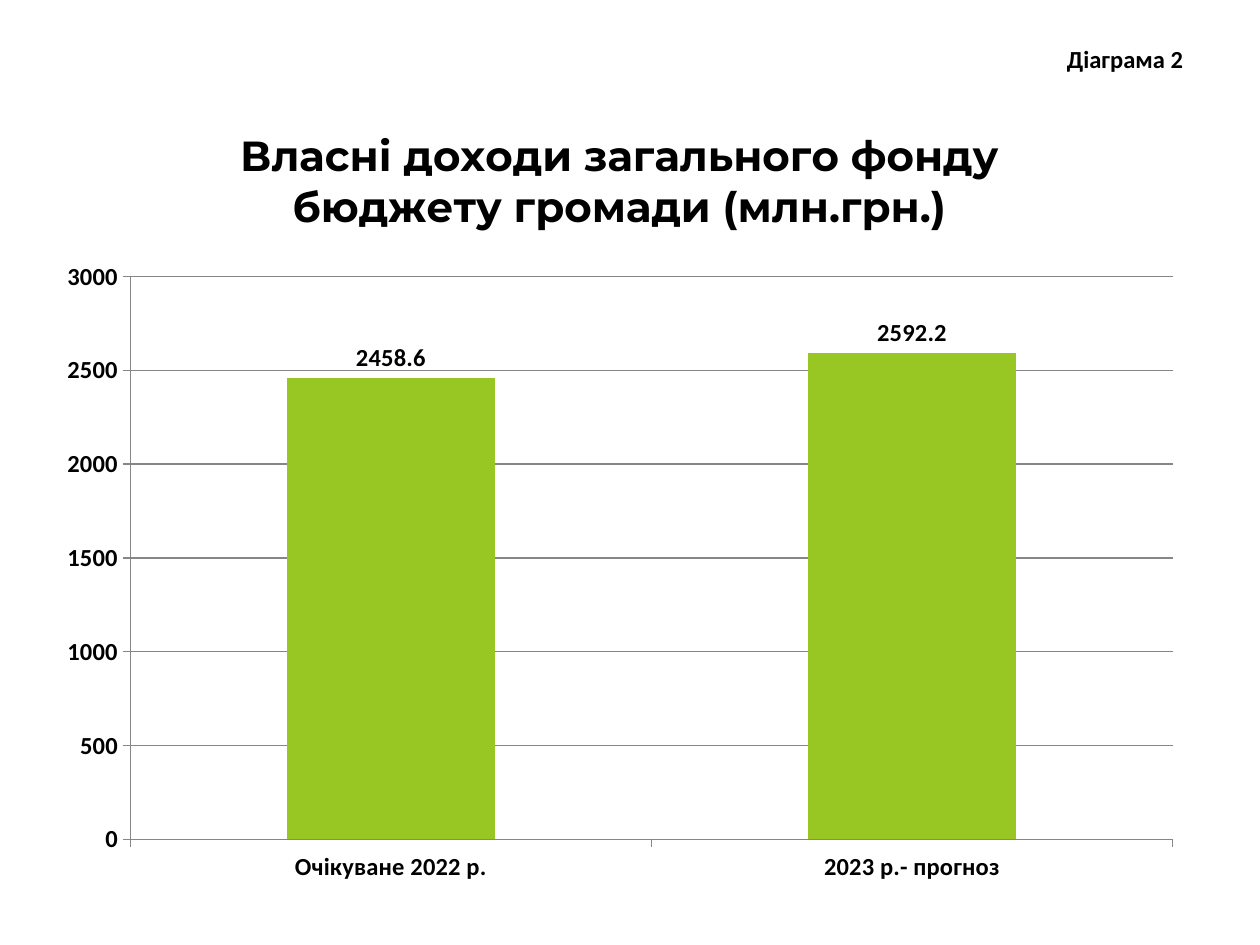
import pptx
import pptx.chart.data
import pptx.dml.color
import pptx.enum.chart
import pptx.enum.text
import pptx.oxml
import pptx.oxml.ns
import pptx.util

Pt = pptx.util.Pt
COLORS = {"text": "000000", "bar": "98C723", "line": "868686"}
BODY_FONT = "Calibri"
TITLE_FONT = "Montserrat"
TITLE = "Власні доходи загального фонду бюджету громади (млн.грн.)"
REVENUES = {"Очікуване 2022 р.": 2458.6, "2023 р.- прогноз": 2592.2}


def rgb(name):
    return pptx.dml.color.RGBColor.from_string(COLORS[name])


def style_font(font, size, name=BODY_FONT):
    font.name = name
    font.size = Pt(size)
    font.bold = True
    font.color.rgb = rgb("text")


def style_line(line):
    line.color.rgb = rgb("line")
    line.width = Pt(0.75)


def add_caption(slide, left, top, width, height):
    frame = slide.shapes.add_textbox(left, top, width, height).text_frame
    frame.word_wrap = True
    frame.auto_size = pptx.enum.text.MSO_AUTO_SIZE.SHAPE_TO_FIT_TEXT
    frame.text = "Діаграма 2"
    paragraph = frame.paragraphs[0]
    paragraph.alignment = pptx.enum.text.PP_ALIGN.RIGHT
    style_font(paragraph.runs[0].font, 14)


def set_plot_area(chart, x, y, w, h):
    """Place the inner plot area, in fractions of the chart box."""
    plot_area = chart.plots[0]._element.getparent()
    for old in plot_area.findall(pptx.oxml.ns.qn("c:layout")):
        plot_area.remove(old)
    parts = [("layoutTarget", "inner"), ("xMode", "edge"), ("yMode", "edge"),
             ("x", x), ("y", y), ("w", w), ("h", h)]
    items = "".join(f'<c:{tag} val="{value}"/>' for tag, value in parts)
    plot_area.insert(0, pptx.oxml.parse_xml(
        f'<c:layout {pptx.oxml.ns.nsdecls("c")}>'
        f"<c:manualLayout>{items}</c:manualLayout></c:layout>"))


def add_revenue_chart(slide, left, top, width, height):
    data = pptx.chart.data.CategoryChartData(number_format="0.0")
    data.categories = list(REVENUES)
    data.add_series(TITLE, list(REVENUES.values()))
    chart = slide.shapes.add_chart(
        pptx.enum.chart.XL_CHART_TYPE.COLUMN_CLUSTERED,
        left, top, width, height, data).chart
    chart.has_legend = False
    chart.font.name = BODY_FONT
    chart.font.size = Pt(10)
    chart.font.color.rgb = rgb("text")

    chart.has_title = True
    chart.chart_title.include_in_layout = False
    heading = chart.chart_title.text_frame
    heading.text = TITLE
    style_font(heading.paragraphs[0].runs[0].font, 24, TITLE_FONT)

    for axis in (chart.category_axis, chart.value_axis):
        axis.major_tick_mark = pptx.enum.chart.XL_TICK_MARK.OUTSIDE
        style_font(axis.tick_labels.font, 14)
        style_line(axis.format.line)
    values = chart.value_axis
    values.minimum_scale, values.maximum_scale = 0, 3000
    values.major_unit = 500
    values.has_major_gridlines = True
    style_line(values.major_gridlines.format.line)
    values.tick_labels.number_format = "0"
    values.tick_labels.number_format_is_linked = False

    plot = chart.plots[0]
    plot.gap_width = 150
    plot.vary_by_categories = False
    revenue = plot.series[0]
    revenue.format.fill.solid()
    revenue.format.fill.fore_color.rgb = rgb("bar")
    labels = revenue.data_labels
    labels.show_value = True
    labels.number_format = "0.0"
    labels.number_format_is_linked = False
    labels.position = pptx.enum.chart.XL_LABEL_POSITION.OUTSIDE_END
    style_font(labels.font, 14)
    set_plot_area(chart, 0.075, 0.225, 0.906, 0.7)


def main():
    deck = pptx.Presentation()
    deck.slide_width, deck.slide_height = Pt(720), Pt(540)
    slide = deck.slides.add_slide(deck.slide_layouts[6])
    add_caption(slide, Pt(547.2), Pt(21.6), Pt(136), Pt(24.5))
    add_revenue_chart(slide, Pt(25.2), Pt(54.7), Pt(657.4), Pt(459.4))
    deck.save("out.pptx")


if __name__ == "__main__":
    main()
